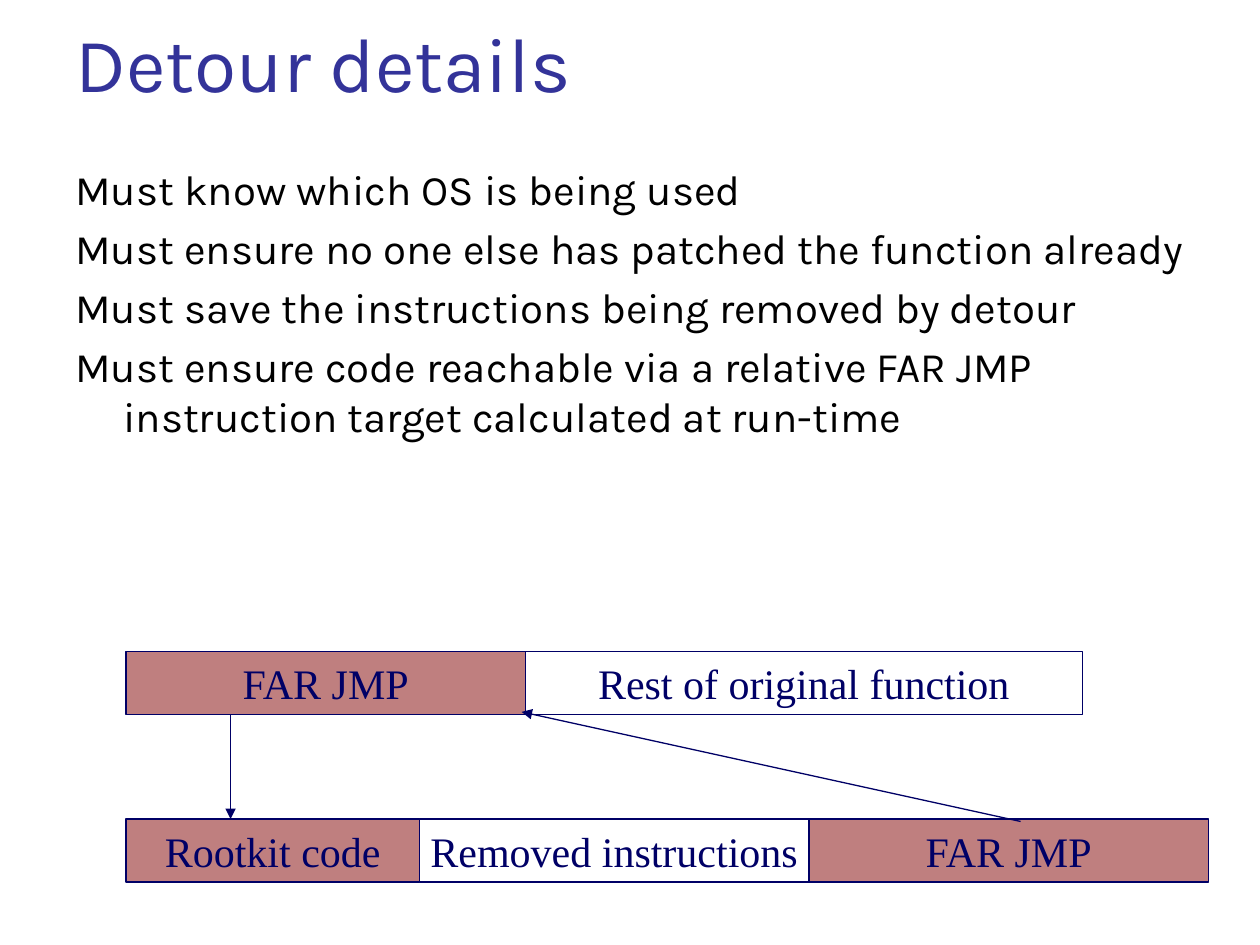
"""Build the slide that explains how a detour patches a function."""
from dataclasses import dataclass

from lxml.etree import SubElement
from pptx import Presentation
from pptx.dml.color import RGBColor
from pptx.enum.shapes import MSO_CONNECTOR, MSO_SHAPE
from pptx.enum.text import MSO_ANCHOR, MSO_AUTO_SIZE, PP_ALIGN
from pptx.oxml.ns import qn
from pptx.slide import Slide
from pptx.util import Inches, Pt

TITLE_BLUE = RGBColor(0x33, 0x33, 0x99)
NAVY = RGBColor(0x00, 0x00, 0x66)
MAROON = RGBColor(0x80, 0x00, 0x00)
BLACK = RGBColor(0x00, 0x00, 0x00)

TITLE_FONT = {"name": "Karla", "size": Pt(44), "color": TITLE_BLUE}
BODY_FONT = {"name": "Karla", "size": Pt(24), "color": BLACK}
BOX_FONT = {"name": "Times New Roman", "size": Pt(24), "color": NAVY}

LINE_WIDTH = Pt(0.75)
ROW_LEFT = 1
BOX_HEIGHT = 0.5
HANGING_INDENT = Inches(0.38)

REQUIREMENTS = (
    "Must know which OS is being used",
    "Must ensure no one else has patched the function already",
    "Must save the instructions being removed by detour",
    "Must ensure code reachable via a relative FAR JMP instruction target calculated at run-time",
)


@dataclass(frozen=True)
class CodeBlock:
    """A stretch of code in a memory row."""

    label: str
    width: float
    patched: bool


@dataclass(frozen=True)
class Jump:
    """An arrow between two points in inches."""

    start: tuple[float, float]
    end: tuple[float, float]


MEMORY_ROWS = {
    5.17: (
        CodeBlock("FAR JMP", 3.17, True),
        CodeBlock("Rest of original function", 4.42, False),
    ),
    6.5: (
        CodeBlock("Rootkit code", 2.33, True),
        CodeBlock("Removed instructions", 3.09, False),
        CodeBlock("FAR JMP", 3.17, True),
    ),
}

JUMPS = (
    Jump((1.83, 5.67), (1.83, 6.5)),
    Jump((8.1, 6.52), (4.14, 5.65)),
)


def set_attributes(target: object, values: dict) -> None:
    """Set each named attribute of the target."""
    for name, value in values.items():
        setattr(target, name, value)


def format_font(font: object, values: dict) -> None:
    """Apply font values, with the colour going to the font fill."""
    set_attributes(font, {name: value for name, value in values.items() if name != "color"})
    font.color.rgb = values["color"]


def add_title(slide: Slide, text: str) -> None:
    """Place and format the title placeholder."""
    title = slide.shapes.title
    set_attributes(title, {
        "left": Inches(0.5), "top": Inches(0.23),
        "width": Inches(9.2), "height": Inches(0.68),
    })
    set_attributes(title.text_frame, {
        "text": text, "vertical_anchor": MSO_ANCHOR.BOTTOM,
        "auto_size": MSO_AUTO_SIZE.NONE, "word_wrap": True,
    })
    paragraph = title.text_frame.paragraphs[0]
    paragraph.alignment = PP_ALIGN.LEFT
    format_font(paragraph.runs[0].font, TITLE_FONT)


def add_requirements(slide: Slide, requirements: tuple[str, ...]) -> None:
    """Add the requirements as paragraphs with a hanging indent."""
    text_box = slide.shapes.add_textbox(Inches(0.5), Inches(1.25), Inches(9.17), Inches(5.46))
    text_frame = text_box.text_frame
    text_frame.word_wrap = True
    text_frame.text = "\n".join(requirements)
    for paragraph in text_frame.paragraphs:
        paragraph.space_before = Pt(4.8)
        properties = paragraph._p.get_or_add_pPr()
        properties.set("marL", str(HANGING_INDENT))
        properties.set("indent", str(-HANGING_INDENT))
        format_font(paragraph.runs[0].font, BODY_FONT)


def add_code_block(slide: Slide, block: CodeBlock, left: float, top: float) -> None:
    """Draw one labelled block, tinted when it is patched code."""
    shape = slide.shapes.add_shape(
        MSO_SHAPE.RECTANGLE, Inches(left), Inches(top), Inches(block.width), Inches(BOX_HEIGHT)
    )
    shape.shadow.inherit = False
    if block.patched:
        shape.fill.solid()
        shape.fill.fore_color.rgb = MAROON
        color = shape._element.spPr.find(qn("a:solidFill")).find(qn("a:srgbClr"))
        SubElement(color, qn("a:alpha"), val="50000")
    else:
        shape.fill.background()
    shape.line.color.rgb = NAVY
    shape.line.width = LINE_WIDTH
    set_attributes(shape.text_frame, {
        "text": block.label, "word_wrap": False, "vertical_anchor": MSO_ANCHOR.MIDDLE,
    })
    paragraph = shape.text_frame.paragraphs[0]
    paragraph.alignment = PP_ALIGN.CENTER
    format_font(paragraph.runs[0].font, BOX_FONT)


def add_memory_row(slide: Slide, blocks: tuple[CodeBlock, ...], top: float) -> None:
    """Lay the blocks side by side from the left edge of the row."""
    left = ROW_LEFT
    for block in blocks:
        add_code_block(slide, block, left, top)
        left += block.width


def add_jump(slide: Slide, jump: Jump) -> None:
    """Draw a jump as a line with a triangular head."""
    points = [Inches(value) for value in (*jump.start, *jump.end)]
    connector = slide.shapes.add_connector(MSO_CONNECTOR.STRAIGHT, *points)
    connector.line.color.rgb = NAVY
    connector.line.width = LINE_WIDTH
    SubElement(connector.line._get_or_add_ln(), qn("a:tailEnd"), type="triangle")
    SubElement(connector._element.spPr, qn("a:effectLst"))


def main() -> None:
    """Build and save the presentation."""
    presentation = Presentation()
    set_attributes(presentation, {"slide_width": Inches(10), "slide_height": Inches(7.5)})
    slide = presentation.slides.add_slide(presentation.slide_layouts.get_by_name("Title Only"))
    add_title(slide, "Detour details")
    add_requirements(slide, REQUIREMENTS)
    for top, blocks in MEMORY_ROWS.items():
        add_memory_row(slide, blocks, top)
    for jump in JUMPS:
        add_jump(slide, jump)
    presentation.save("out.pptx")


if __name__ == "__main__":
    main()
